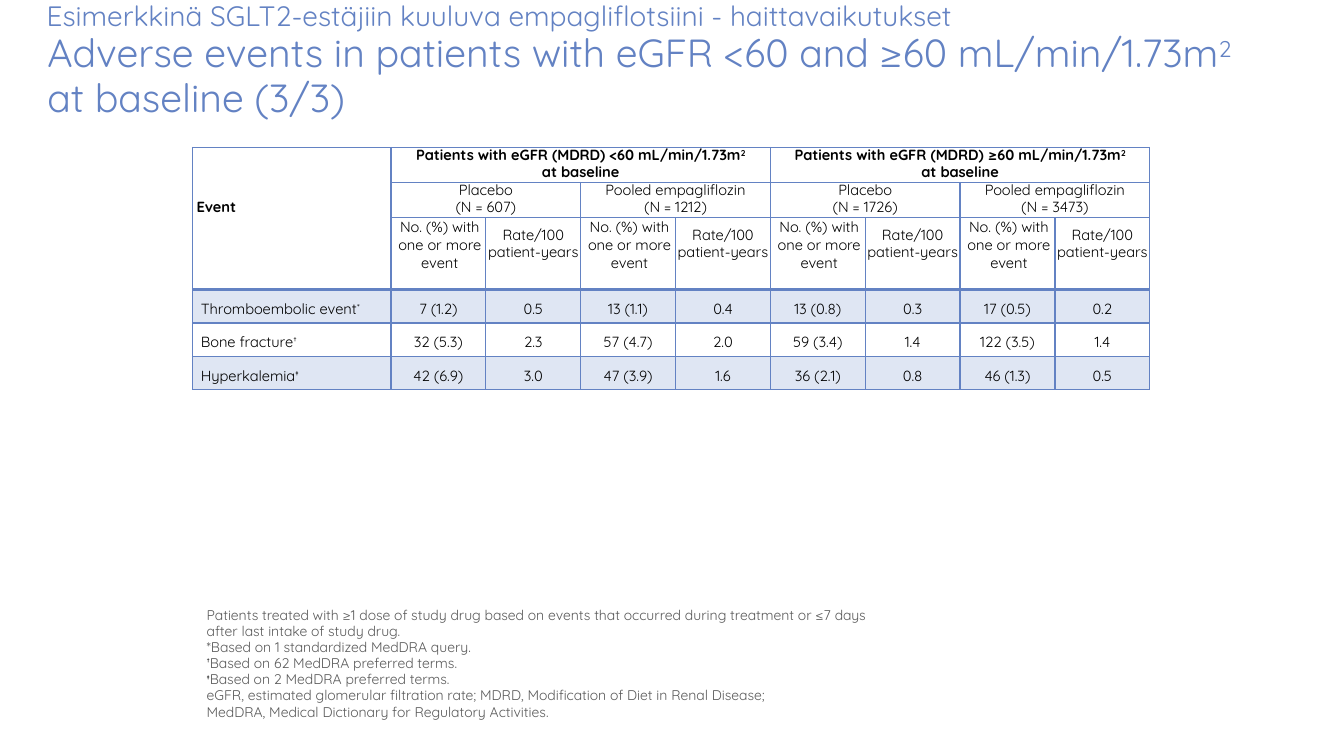
from lxml import etree
from pptx import Presentation
from pptx.dml.color import RGBColor
from pptx.enum import text
from pptx.oxml import ns
from pptx.util import Pt

COLORS = {"blue": "6382C3", "grey": "5A5A5A", "black": "000000"}
FONT = "Quicksand"
LEFT, CENTER = text.PP_ALIGN.LEFT, text.PP_ALIGN.CENTER

SUBTITLE = ["Esimerkkinä SGLT2-estäjiin kuuluva empagliflotsiini - haittavaikutukset"]
TITLE = ["Adverse events in patients with eGFR <60 and ≥60 mL/min/1.73m^2^", "at baseline (3/3)"]
GROUPS = [
    ["Patients with eGFR (MDRD) <60 mL/min/1.73m^2^", "at baseline"],
    ["Patients with eGFR (MDRD) ≥60 mL/min/1.73m^2^", "at baseline"],
]
ARMS = [
    ["Placebo", "(N = 607)"],
    ["Pooled empagliflozin", "(N = 1212)"],
    ["Placebo", "(N = 1726)"],
    ["Pooled empagliflozin", "(N = 3473)"],
]
COUNT = ["No. (%) with one or more event"]
RATE = ["Rate/100", "patient-years"]
EVENTS = [
    ["Thromboembolic event^*^", "7 (1.2)", "0.5", "13 (1.1)", "0.4", "13 (0.8)", "0.3", "17 (0.5)", "0.2"],
    ["Bone fracture^†^", "32 (5.3)", "2.3", "57 (4.7)", "2.0", "59 (3.4)", "1.4", "122 (3.5)", "1.4"],
    ["Hyperkalemia^‡^", "42 (6.9)", "3.0", "47 (3.9)", "1.6", "36 (2.1)", "0.8", "46 (1.3)", "0.5"],
]
NOTES = [
    "Patients treated with ≥1 dose of study drug based on events that occurred during treatment or ≤7 days",
    "after last intake of study drug.",
    "*Based on 1 standardized MedDRA query.",
    "^†^Based on 62 MedDRA preferred terms.",
    "^‡^Based on 2 MedDRA preferred terms.",
    "eGFR, estimated glomerular filtration rate; MDRD, Modification of Diet in Renal Disease;",
    "MedDRA, Medical Dictionary for Regulatory Activities.",
]
COLUMNS = [141.8] + [67.75] * 8
ROWS = [25, 25.2, 51.4] + [23.8] * 3


def write(frame, lines, size=10.5, color="black", raised=None, bold=False, align=CENTER, spacing=None):
    frame.word_wrap = True
    for index, line in enumerate(lines):
        para = frame.paragraphs[0] if index == 0 else frame.add_paragraph()
        para.alignment = align
        para.space_before = Pt(0)
        if spacing:
            para.line_spacing = spacing
        for order, piece in enumerate(line.split("^")):
            if not piece:
                continue
            span = para.add_run()
            span.text = piece
            span.font.name, span.font.size, span.font.bold = FONT, Pt(size), bold
            above = order % 2 == 1
            span.font.color.rgb = RGBColor.from_string(COLORS[raised if above and raised else color])
            if above:
                span.font._element.set("baseline", "26000")


def place(box, left, top, width, height):
    box.left, box.top, box.width, box.height = Pt(left), Pt(top), Pt(width), Pt(height)
    frame = box.text_frame
    frame.auto_size = text.MSO_AUTO_SIZE.NONE
    frame.vertical_anchor = text.MSO_ANCHOR.TOP
    frame.margin_left = frame.margin_right = frame.margin_bottom = 0
    frame.margin_top = Pt(1)
    return frame


def style_cell(cell, row):
    props = cell._tc.get_or_add_tcPr()
    for side in ("lnL", "lnR", "lnT", "lnB"):
        thick = (side, row) in (("lnB", 2), ("lnT", 3))
        line = etree.SubElement(props, ns.qn("a:" + side), w=str(Pt(2.25 if thick else 1)))
        solid = etree.SubElement(line, ns.qn("a:solidFill"))
        etree.SubElement(solid, ns.qn("a:srgbClr"), val=COLORS["blue"])
    if row in (3, 5):
        cell.fill.solid()
        cell.fill.fore_color.rgb = RGBColor.from_string(COLORS["blue"])
        shade = props.find(ns.qn("a:solidFill"))[0]
        etree.SubElement(shade, ns.qn("a:alpha"), val="20000")
    else:
        cell.fill.background()


def fill_cell(cell, lines, top=0, left=0, **style):
    cell.margin_right = cell.margin_bottom = 0
    cell.margin_left, cell.margin_top = Pt(left), Pt(top)
    cell.vertical_anchor = text.MSO_ANCHOR.TOP
    write(cell.text_frame, lines, **style)


def add_events_table(page):
    frame = page.shapes.add_table(len(ROWS), len(COLUMNS), Pt(137.5), Pt(105.4), Pt(sum(COLUMNS)), Pt(sum(ROWS)))
    table = frame.table
    table.first_row = table.horz_banding = False
    for column, width in zip(table.columns, COLUMNS):
        column.width = Pt(width)
    for index, height in enumerate(ROWS):
        table.rows[index].height = Pt(height)
        for cell in table.rows[index].cells:
            cell.margin_left = cell.margin_right = cell.margin_top = cell.margin_bottom = 0
            style_cell(cell, index)

    table.cell(0, 0).merge(table.cell(2, 0))
    fill_cell(table.cell(0, 0), ["Event"], top=36, left=3, bold=True, align=LEFT)
    for row, headings, reach, bold in ((0, GROUPS, 4, True), (1, ARMS, 2, False)):
        for index, lines in enumerate(headings):
            first = 1 + index * reach
            table.cell(row, first).merge(table.cell(row, first + reach - 1))
            fill_cell(table.cell(row, first), lines, bold=bold, spacing=Pt(12))
    for column in range(1, len(COLUMNS), 2):
        fill_cell(table.cell(2, column), COUNT, left=2, spacing=0.99)
        fill_cell(table.cell(2, column + 1), RATE, top=6.5, spacing=Pt(12.4))
    for row, values in enumerate(EVENTS, 3):
        for column, value in enumerate(values):
            label = column == 0
            fill_cell(table.cell(row, column), [value], top=7.2, left=6 if label else 0, align=LEFT if label else CENTER)


def main():
    deck = Presentation()
    deck.slide_width, deck.slide_height = Pt(960), Pt(540)
    page = deck.slides.add_slide(deck.slide_layouts[5])
    subtitle = page.shapes.add_textbox(0, 0, 0, 0)
    write(place(subtitle, 33.3, -2.2, 657, 26), SUBTITLE, size=20, color="blue", align=LEFT)
    title = place(page.shapes.title, 33.8, 21.6, 888, 69)
    write(title, TITLE, size=28, color="blue", align=LEFT, spacing=0.96)
    add_events_table(page)
    notes = page.shapes.add_textbox(0, 0, 0, 0)
    write(place(notes, 147.6, 432.7, 502.6, 85.7), NOTES, size=10, color="grey", raised="black", align=LEFT, spacing=0.96)
    deck.save("out.pptx")


if __name__ == "__main__":
    main()
